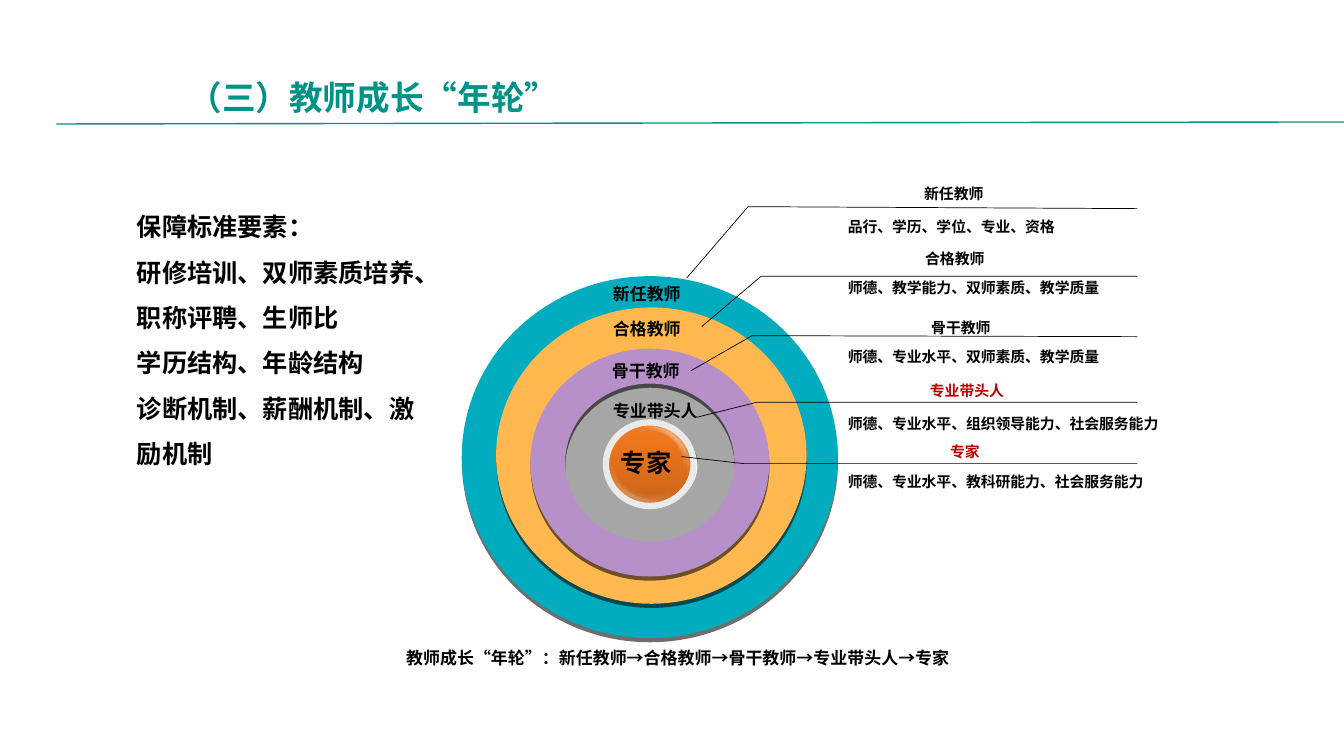
"""Build the slide on the growth rings of a teacher's career."""
from dataclasses import dataclass
from math import cos, radians, sin

from lxml import etree
from pptx import Presentation
from pptx.dml.color import RGBColor
from pptx.enum.shapes import MSO_CONNECTOR, MSO_SHAPE
from pptx.enum.text import MSO_AUTO_SIZE, PP_ALIGN
from pptx.oxml.ns import qn
from pptx.util import Pt

PX = 9144
DONUT, OVAL, MOON = MSO_SHAPE.DONUT, MSO_SHAPE.OVAL, MSO_SHAPE.MOON
STRAIGHT = MSO_CONNECTOR.STRAIGHT
LEFT, CENTER = PP_ALIGN.LEFT, PP_ALIGN.CENTER
GROW = MSO_AUTO_SIZE.SHAPE_TO_FIT_TEXT
CJK = "Noto Sans CJK SC"
COLORS = {
    "title": "009287", "black": "000000", "red": "C00000", "white": "FFFFFF",
    "teal": "01ACBE", "amber": "FFB850", "grey": "A6A6A6", "purple": "B790C9",
    "ball_top": "F77A1D", "ball_bottom": "CA6418", "ball_rim": "EAEAEA",
}

Box = tuple[int, int, int, int]


@dataclass(frozen=True)
class Ring:
    box: Box
    thickness: float
    color: str


@dataclass(frozen=True)
class Gloss:
    angles: tuple[float, ...]
    distance: int
    width: int
    height: int


@dataclass(frozen=True)
class Callout:
    title: str
    detail: str
    title_left: int
    title_top: int
    detail_top: int
    points: tuple[tuple[int, int], ...]
    color: str = "black"


RINGS = [
    Ring((458, 274, 373, 359), 0.1, "teal"),
    Ring((492, 305, 308, 294), 0.148, "amber"),
    Ring((557, 376, 178, 170), 0.253, "grey"),
    Ring((526, 346, 237, 226), 0.153, "purple"),
]
BALL: Box = (601, 419, 87, 83)
UPPER_ANGLES = (286.2, 299.8, 304.7, 313.6, 308.8, 322.4, 327.3, 336.2)
GLOSSES = [
    Gloss((89.6, 103.2, 108.1, 117, 112.2, 125.7, 130.7, 139.5), 34, 12, 48),
    Gloss((89.6, 103.2), 31, 10, 39),
    Gloss(UPPER_ANGLES, 35, 12, 47),
    Gloss(UPPER_ANGLES, 33, 10, 38),
]
RING_LABELS = [("专业带头人", 598, 392), ("骨干教师", 597, 353),
               ("合格教师", 598, 311), ("新任教师", 598, 276)]
CALLOUTS = [
    Callout("专家", "师德、专业水平、教科研能力、社会服务能力", 907, 434, 464,
            ((676, 453), (738, 460), (1128, 460)), "red"),
    Callout("专业带头人", "师德、专业水平、组织领导能力、社会服务能力", 909, 374, 406,
            ((691, 414), (751, 399), (1128, 399)), "red"),
    Callout("骨干教师", "师德、专业水平、双师素质、教学质量", 903, 311, 340,
            ((685, 368), (746, 333), (1128, 334))),
    Callout("合格教师", "师德、教学能力、双师素质、教学质量", 897, 243, 272,
            ((696, 324), (755, 274), (1128, 274))),
    Callout("新任教师", "品行、学历、学位、专业、资格", 896, 178, 211,
            ((681, 276), (742, 205), (1128, 207))),
]
CAPTION = "教师成长“年轮”：新任教师→合格教师→骨干教师→专业带头人→专家"
FACTORS = ["保障标准要素：", "研修培训、双师素质培养、职称评聘、生师比",
           "学历结构、年龄结构", "诊断机制、薪酬机制、激励机制"]


def rgb(name: str) -> RGBColor:
    return RGBColor.from_string(COLORS[name])


def emu(box: Box) -> list[int]:
    return [length * PX for length in box]


def add_text(slide, box: Box, lines: list[str], size: float, color: str = "black",
             align=LEFT, font: str = CJK, spacing: float = 1.0, inset: int = 10) -> None:
    frame = slide.shapes.add_textbox(*emu(box)).text_frame
    frame.word_wrap = True
    frame.auto_size = GROW
    frame.margin_left = frame.margin_right = inset * PX
    frame.margin_top = frame.margin_bottom = inset * PX // 2
    for index, line in enumerate(lines):
        paragraph = frame.add_paragraph() if index else frame.paragraphs[0]
        paragraph.alignment = align
        paragraph.line_spacing = spacing
        run = paragraph.add_run()
        run.text = line
        run.font.name = font
        run.font.size = Pt(size)
        run.font.bold = True
        run.font.color.rgb = rgb(color)
        east_asian = etree.SubElement(run.font._element, qn("a:ea"))
        east_asian.set("typeface", font)


def add_solid(slide, kind, box: Box, color: str, adjustment: float):
    shape = slide.shapes.add_shape(kind, *emu(box))
    shape.shadow.inherit = False
    shape.adjustments[0] = adjustment
    shape.fill.solid()
    shape.fill.fore_color.rgb = rgb(color)
    shape.line.fill.background()
    return shape


def set_alpha(color_element, percent: int) -> None:
    etree.SubElement(color_element, qn("a:alpha")).set("val", str(percent * 1000))


def add_ring(slide, ring: Ring) -> None:
    shape = add_solid(slide, DONUT, ring.box, ring.color, ring.thickness)
    effects = shape._element.spPr.find(qn("a:effectLst"))
    shadow = etree.SubElement(effects, qn("a:outerShdw"), blurRad="0",
                              dist=str(Pt(3)), dir=str(87 * 60000), rotWithShape="0")
    color = etree.SubElement(shadow, qn("a:srgbClr"), val=COLORS["black"])
    set_alpha(color, 56)


def add_ball(slide) -> None:
    ball = slide.shapes.add_shape(OVAL, *emu(BALL))
    ball.shadow.inherit = False
    ball.fill.gradient()
    ball.fill.gradient_angle = 270
    for stop, name in zip(ball.fill.gradient_stops, ("ball_top", "ball_bottom")):
        stop.color.rgb = rgb(name)
    ball.line.color.rgb = rgb("ball_rim")
    ball.line.width = Pt(4.5)


def add_gloss(slide, gloss: Gloss) -> None:
    left, top, width, height = BALL
    for angle in gloss.angles:
        center_x = left + width / 2 + gloss.distance * cos(radians(angle))
        center_y = top + height / 2 + gloss.distance * sin(radians(angle))
        box = (round(center_x - gloss.width / 2), round(center_y - gloss.height / 2),
               gloss.width, gloss.height)
        moon = add_solid(slide, MOON, box, "white", 0.5)
        moon.rotation = (angle + 180) % 360
        set_alpha(moon._element.spPr.find(qn("a:solidFill"))[0], 4)


def add_callout(slide, callout: Callout) -> None:
    add_text(slide, (callout.title_left, callout.title_top, 100, 29),
             [callout.title], 10.6, callout.color, CENTER)
    add_text(slide, (831, callout.detail_top, 335, 29), [callout.detail], 10.6)
    start, *rest = callout.points
    builder = slide.shapes.build_freeform(*start, scale=PX)
    builder.add_line_segments(rest, close=False)
    leader = builder.convert_to_shape()
    leader.shadow.inherit = False
    leader.fill.background()
    leader.line.color.rgb = rgb("black")
    leader.line.width = Pt(0.5)


def add_title(slide) -> None:
    add_text(slide, (169, 47, 526, 78), ["（三）教师成长“年轮”"], 24, "title",
             spacing=1.5, inset=18)
    rule = slide.shapes.add_connector(STRAIGHT, *emu((56, 123, 1333, 121)))
    rule.line.color.rgb = rgb("title")
    rule.line.width = Pt(1)
    etree.SubElement(rule._element.spPr, qn("a:effectLst"))


def main() -> None:
    presentation = Presentation()
    presentation.slide_width, presentation.slide_height = 1333 * PX, 750 * PX
    slide = presentation.slides.add_slide(presentation.slide_layouts[6])
    add_title(slide)
    for ring in RINGS:
        add_ring(slide, ring)
    add_ball(slide)
    for gloss in GLOSSES:
        add_gloss(slide, gloss)
    for label, left, top in RING_LABELS:
        add_text(slide, (left, top, 105, 31), [label], 12.1)
    for callout in CALLOUTS:
        add_callout(slide, callout)
    add_text(slide, (393, 638, 559, 30), [CAPTION], 12.1)
    add_text(slide, (606, 439, 75, 40), ["专家"], 18, font="Arial")
    add_text(slide, (126, 190, 311, 280), FACTORS, 18, spacing=1.5)
    presentation.save("out.pptx")


if __name__ == "__main__":
    main()
